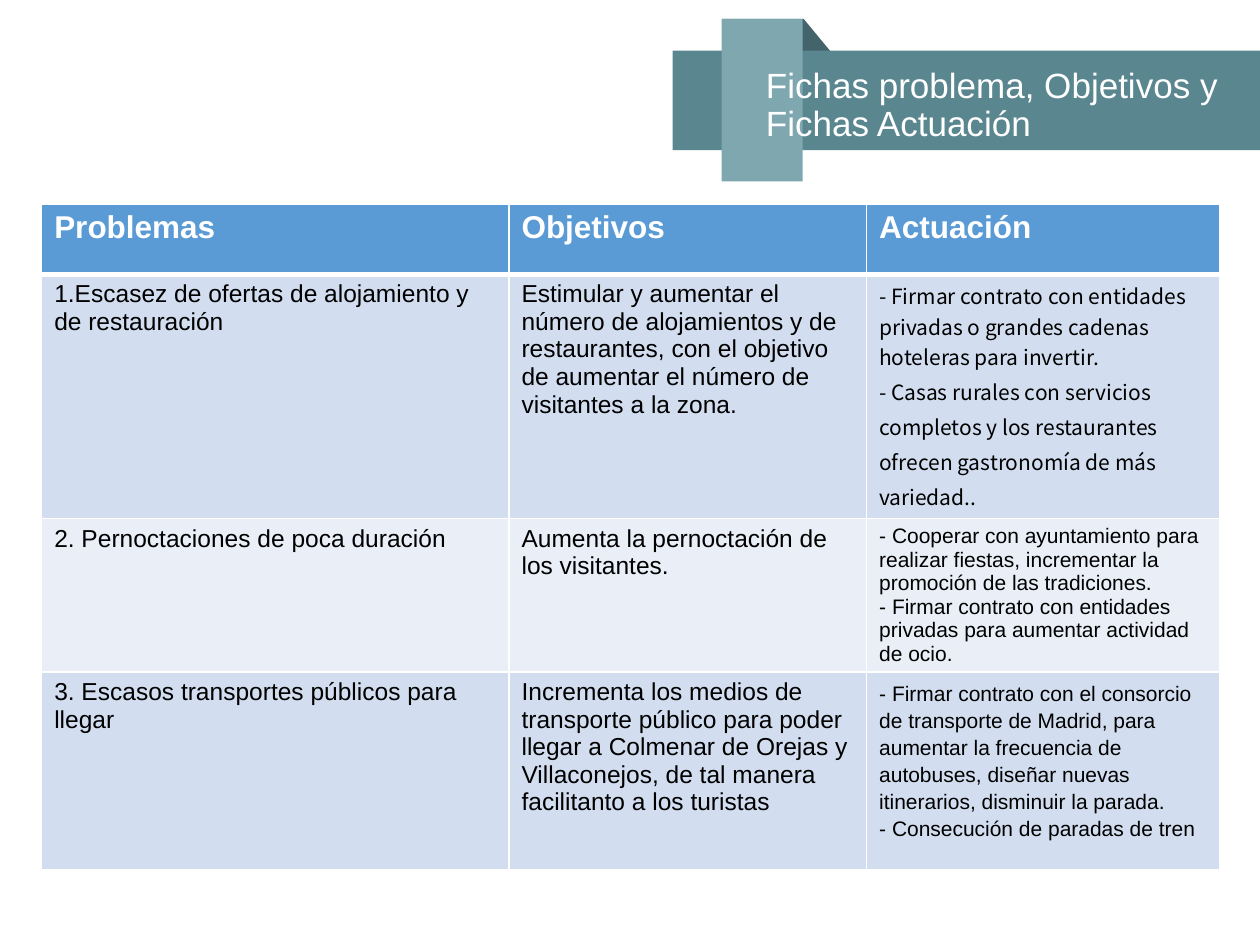
from typing import NamedTuple

from lxml import etree
from pptx import Presentation
from pptx.dml.color import RGBColor
from pptx.enum.shapes import MSO_SHAPE
from pptx.enum.text import MSO_ANCHOR, MSO_AUTO_SIZE, PP_ALIGN
from pptx.oxml.ns import qn
from pptx.util import Cm, Pt

RECT = MSO_SHAPE.RECTANGLE
TOP = MSO_ANCHOR.TOP
LEFT = PP_ALIGN.LEFT
NO_FIT = MSO_AUTO_SIZE.NONE

WHITE = RGBColor(0xFF, 0xFF, 0xFF)
BLACK = RGBColor(0x00, 0x00, 0x00)
DARK = RGBColor(0x43, 0x64, 0x6B)
TEAL = RGBColor(0x5A, 0x86, 0x8F)
PALE = RGBColor(0x7F, 0xA7, 0xAF)
BLUE = RGBColor(0x5B, 0x9B, 0xD5)
BANDS = (RGBColor(0xD2, 0xDE, 0xEF), RGBColor(0xEA, 0xEF, 0xF7))

ARIAL = "Arial"
NOTO = "Noto Sans CJK JP"


class Bar(NamedTuple):
    left: float
    top: float
    width: float
    height: float
    color: RGBColor


class Action(NamedTuple):
    text: str
    space: float = 1.0
    face: str = ARIAL


class Record(NamedTuple):
    problem: str
    goal: str
    actions: tuple[Action, ...]
    height: float


BARS = (
    Bar(13.56, 1.02, 11.84, 2.01, TEAL),
    Bar(14.55, 0.38, 1.63, 3.28, PALE),
)
FOLD = ((14.55, 0.38), (16.2, 0.38), (17.78, 2.29))
HEADS = ("Problemas", "Objetivos", "Actuación")
WIDTHS = (9.42, 7.21, 7.11)
HEAD_HEIGHT = 1.42
RECORDS = (
    Record(
        "1.Escasez de ofertas de alojamiento y de restauración",
        "Estimular y aumentar el número de alojamientos y de restaurantes, "
        "con el objetivo de aumentar el número de visitantes a la zona.",
        (
            Action("- Firmar contrato con entidades privadas o grandes cadenas "
                   "hoteleras para invertir.", face=NOTO),
            Action("- Casas rurales con servicios completos y los restaurantes "
                   "ofrecen gastronomía de más variedad..", 1.15, NOTO),
        ),
        4.92,
    ),
    Record(
        "2. Pernoctaciones de poca duración",
        "Aumenta la pernoctación de los visitantes.",
        (
            Action("- Cooperar con ayuntamiento para realizar fiestas, "
                   "incrementar la promoción de las tradiciones."),
            Action("- Firmar contrato con entidades privadas para aumentar "
                   "actividad de ocio."),
        ),
        3.1,
    ),
    Record(
        "3. Escasos transportes públicos para llegar",
        "Incrementa los medios de transporte público para poder llegar a "
        "Colmenar de Orejas y Villaconejos, de tal manera facilitanto a los turistas",
        (
            Action("- Firmar contrato con el consorcio de transporte de Madrid, "
                   "para aumentar la frecuencia de autobuses, diseñar nuevas "
                   "itinerarios, disminuir la parada.", 1.15),
            Action("- Consecución de paradas de tren", 1.15),
        ),
        3.99,
    ),
)


def paint(shape, color: RGBColor) -> None:
    shape.fill.solid()
    shape.fill.fore_color.rgb = color
    shape.line.fill.background()
    shape.shadow.inherit = False


def style(para, size: int, color: RGBColor, face: str = ARIAL,
          bold: bool = False) -> None:
    font = para.font
    font.size, font.name, font.bold = Pt(size), face, bold
    font.color.rgb = color


def draw_ribbon(slide) -> None:
    start, *rest = [(Cm(x), Cm(y)) for x, y in FOLD]
    fold = slide.shapes.build_freeform(*start)
    fold.add_line_segments(rest, close=True)
    paint(fold.convert_to_shape(), DARK)
    for bar in BARS:
        box = map(Cm, bar[:4])
        paint(slide.shapes.add_shape(RECT, *box), bar.color)


def set_title(slide, text: str) -> None:
    title = slide.shapes.title
    title.left, title.top, title.width, title.height = map(
        Cm, (15.19, 1.12, 9.86, 1.68))
    frame = title.text_frame
    frame.text = text
    frame.word_wrap = True
    frame.auto_size = NO_FIT
    frame.vertical_anchor = TOP
    frame.margin_left = frame.margin_right = Cm(0.25)
    frame.margin_top = frame.margin_bottom = Cm(0.25)
    para = frame.paragraphs[0]
    para.alignment = LEFT
    para.line_spacing = 0.9
    style(para, 20, WHITE)
    # Bring the title in front of the ribbon
    title.element.getparent().append(title.element)


def fill_cell(cell, color: RGBColor, base: int = 1) -> None:
    """Set white borders, with a bottom one of base points, and the fill."""
    props = cell._tc.get_or_add_tcPr()
    for side, width in (("L", 1), ("R", 1), ("T", 1), ("B", base)):
        line = etree.SubElement(props, qn(f"a:ln{side}"), w=str(Pt(width)))
        solid = etree.SubElement(line, qn("a:solidFill"))
        etree.SubElement(solid, qn("a:srgbClr"), val=str(WHITE))
    cell.fill.solid()
    cell.fill.fore_color.rgb = color


def draw_table(slide) -> None:
    heights = (HEAD_HEIGHT, *(rec.height for rec in RECORDS))
    table = slide.shapes.add_table(
        len(heights), len(WIDTHS), Cm(0.84), Cm(4.11),
        Cm(sum(WIDTHS)), Cm(sum(heights))).table
    for col, width in zip(table.columns, WIDTHS):
        col.width = Cm(width)
    for row, height in zip(table.rows, heights):
        row.height = Cm(height)

    for col, head in enumerate(HEADS):
        cell = table.cell(0, col)
        cell.text = head
        style(cell.text_frame.paragraphs[0], 18, WHITE, bold=True)
        fill_cell(cell, BLUE, 3)

    for row, rec in enumerate(RECORDS, 1):
        cells = [table.cell(row, col) for col in range(len(HEADS))]
        for cell in cells:
            fill_cell(cell, BANDS[(row - 1) % 2], 1)
        for cell, text in zip(cells, (rec.problem, rec.goal)):
            cell.text = text
            style(cell.text_frame.paragraphs[0], 14, BLACK)
        frame = cells[2].text_frame
        frame.text = "\n".join(act.text for act in rec.actions)
        for para, act in zip(frame.paragraphs, rec.actions):
            para.line_spacing = act.space
            style(para, 12, BLACK, act.face)


def main() -> None:
    deck = Presentation()
    deck.slide_width, deck.slide_height = Cm(25.4), Cm(19.05)
    slide = deck.slides.add_slide(deck.slide_layouts[5])
    draw_ribbon(slide)
    set_title(slide, "Fichas problema, Objetivos y Fichas Actuación")
    draw_table(slide)
    deck.save("out.pptx")


if __name__ == "__main__":
    main()
